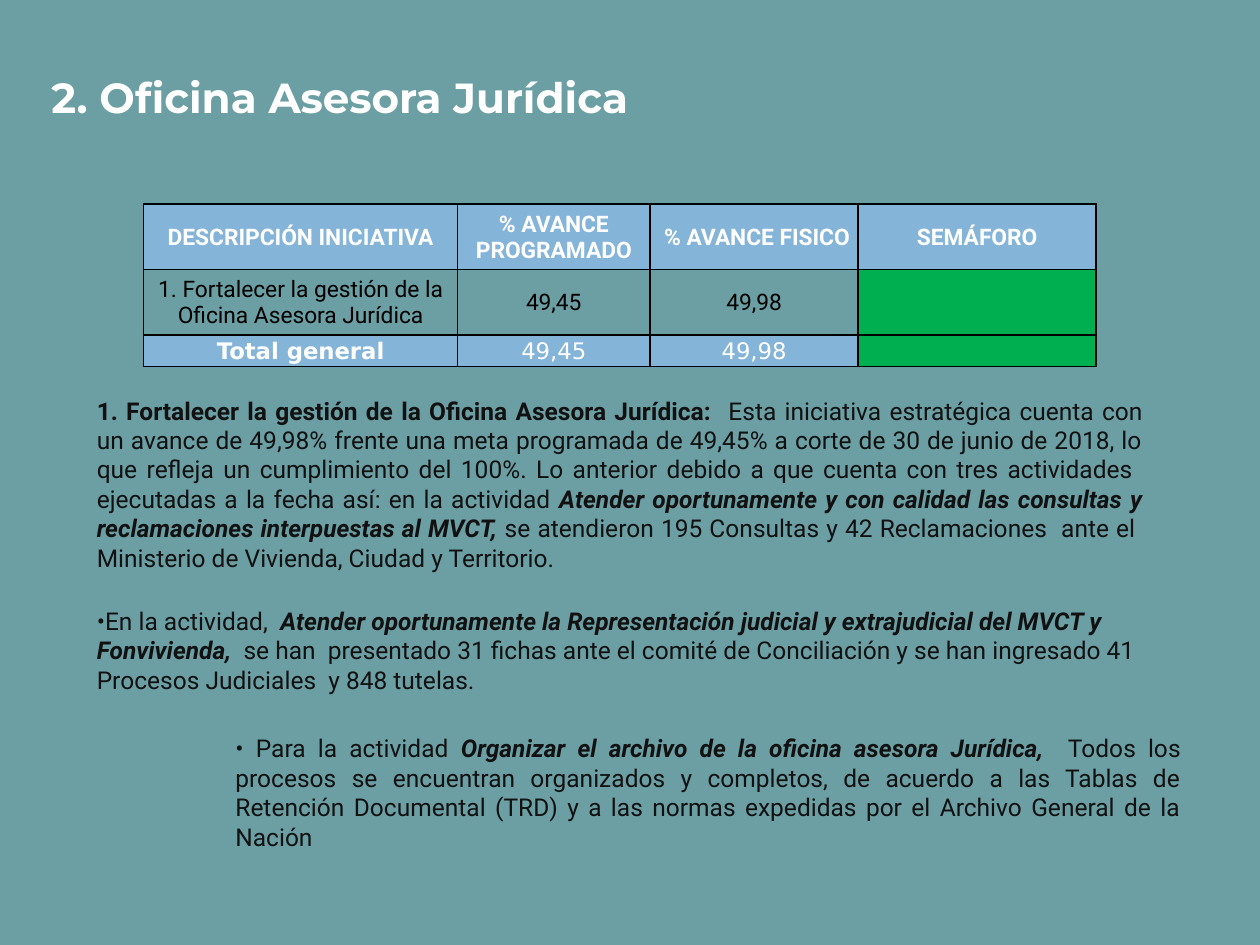
from pptx import Presentation
from pptx.dml.color import RGBColor
from pptx.enum.text import MSO_ANCHOR, PP_ALIGN
from pptx.oxml.ns import qn
from pptx.util import Inches, Pt
from lxml.etree import SubElement

WHITE, BLACK, INK = "FFFFFF", "000000", "111111"
BACK, BLUE, GREEN = "6B9FA4", "85B4D9", "00B050"

TITLE = "2. Oficina Asesora Jurídica"
COLS = [2.49, 1.53, 1.65, 1.89]
ROWS = [0.52, 0.52, 0.25]
CELLS = [
    ["DESCRIPCIÓN INICIATIVA", "% AVANCE PROGRAMADO", " % AVANCE FISICO", "SEMÁFORO"],
    ["1. Fortalecer la gestión de la Oficina Asesora Jurídica", "49,45", "49,98", ""],
    ["Total general", "49,45", "49,98", ""],
]
# One entry per row: fill, font, colour, number of leading bold cells
STYLES = [
    (BLUE, "Roboto", WHITE, 4),
    (None, "Roboto", BLACK, 0),
    (BLUE, "DejaVu Sans", WHITE, 1),
]
# Box, alignment, runs of (text, bold, italic)
NOTES = [
    ((0.67, 3.04, 8.5, 1.26), PP_ALIGN.JUSTIFY, [
        ("1. Fortalecer la gestión de la Oficina Asesora Jurídica:  ", True, False),
        ("Esta iniciativa estratégica cuenta con un avance de 49,98% frente una meta "
         "programada de 49,45% a corte de 30 de junio de 2018, lo que refleja un "
         "cumplimiento del 100%. Lo anterior debido a que cuenta con tres actividades  "
         "ejecutadas a la fecha así: en la actividad ", False, False),
        ("Atender oportunamente y con calidad las consultas y reclamaciones "
         "interpuestas al MVCT, ", True, True),
        ("se atendieron 195 Consultas y 42 Reclamaciones  ante el  Ministerio de "
         "Vivienda, Ciudad y Territorio.", False, False),
    ]),
    ((0.67, 4.71, 8.5, 1.18), PP_ALIGN.LEFT, [
        ("•En la actividad,  ", False, False),
        ("Atender oportunamente la Representación judicial y extrajudicial del MVCT "
         "y Fonvivienda,  ", True, True),
        ("se han  presentado 31 fichas ante el comité de Conciliación y se han "
         "ingresado 41 Procesos Judiciales  y 848 tutelas.", False, False),
    ]),
    ((1.77, 5.72, 7.7, 1.18), PP_ALIGN.JUSTIFY, [
        ("• Para la actividad ", False, False),
        ("Organizar el archivo de la oficina asesora Jurídica, ", True, True),
        (" Todos los procesos se encuentran organizados y completos, de acuerdo a las "
         "Tablas de Retención Documental (TRD) y a las normas expedidas por el Archivo "
         "General de la Nación", False, False),
    ]),
]


def rgb(code):
    return RGBColor.from_string(code)


def style(font, name, size, color):
    font.name, font.size = name, Pt(size)
    font.color.rgb = rgb(color)


def add_text(slide, box, runs, name, size, color, align, anchor=MSO_ANCHOR.TOP):
    frame = slide.shapes.add_textbox(*map(Inches, box)).text_frame
    frame.word_wrap = True
    frame.vertical_anchor = anchor
    frame.margin_left = frame.margin_right = Inches(0.1)
    frame.margin_top = frame.margin_bottom = Inches(0.1)
    para = frame.paragraphs[0]
    para.alignment = align
    style(para.font, name, size, color)
    for text, bold, italic in runs:
        run = para.add_run()
        run.text = text
        run.font.bold, run.font.italic = bold, italic


def add_border(cell):
    props = cell._tc.get_or_add_tcPr()
    for i, side in enumerate(("lnL", "lnR", "lnT", "lnB")):
        line = props.makeelement(qn("a:" + side), {"w": str(Pt(1))})
        fill = SubElement(line, qn("a:solidFill"))
        SubElement(fill, qn("a:srgbClr"), val=BLACK)
        props.insert(i, line)


def fill_cell(cell, text, fill, name, color, bold):
    cell.margin_left = cell.margin_right = cell.margin_top = Inches(0.01)
    cell.margin_bottom = 0
    cell.vertical_anchor = MSO_ANCHOR.MIDDLE
    para = cell.text_frame.paragraphs[0]
    para.alignment = PP_ALIGN.CENTER
    if text:
        para.text = text
        style(para.font, name, 13, color)
        para.font.bold = bold
    else:
        # Keeps an empty cell from stretching its row
        SubElement(para._p, qn("a:endParaRPr"), sz="1000")
        fill = GREEN
    if fill:
        cell.fill.solid()
        cell.fill.fore_color.rgb = rgb(fill)
    else:
        cell.fill.background()
    add_border(cell)


def add_grid(slide):
    size = Inches(sum(COLS)), Inches(sum(ROWS))
    table = slide.shapes.add_table(
        len(ROWS), len(COLS), Inches(1.14), Inches(1.62), *size).table
    for col, width in zip(table.columns, COLS):
        col.width = Inches(width)
    for r, (texts, (fill, name, color, bolds)) in enumerate(zip(CELLS, STYLES)):
        table.rows[r].height = Inches(ROWS[r])
        for c, text in enumerate(texts):
            fill_cell(table.cell(r, c), text, fill, name, color, c < bolds)


def main():
    deck = Presentation()
    deck.slide_width, deck.slide_height = Inches(10), Inches(7.5)
    slide = deck.slides.add_slide(deck.slide_layouts[6])
    slide.background.fill.solid()
    slide.background.fill.fore_color.rgb = rgb(BACK)
    add_text(slide, (0.31, 0.3, 9.19, 0.77), [(TITLE, True, False)],
             "Montserrat", 24, WHITE, PP_ALIGN.LEFT, MSO_ANCHOR.BOTTOM)
    for box, align, runs in NOTES:
        add_text(slide, box, runs, "Roboto", 14, INK, align)
    add_grid(slide)
    deck.save("out.pptx")


if __name__ == "__main__":
    main()
